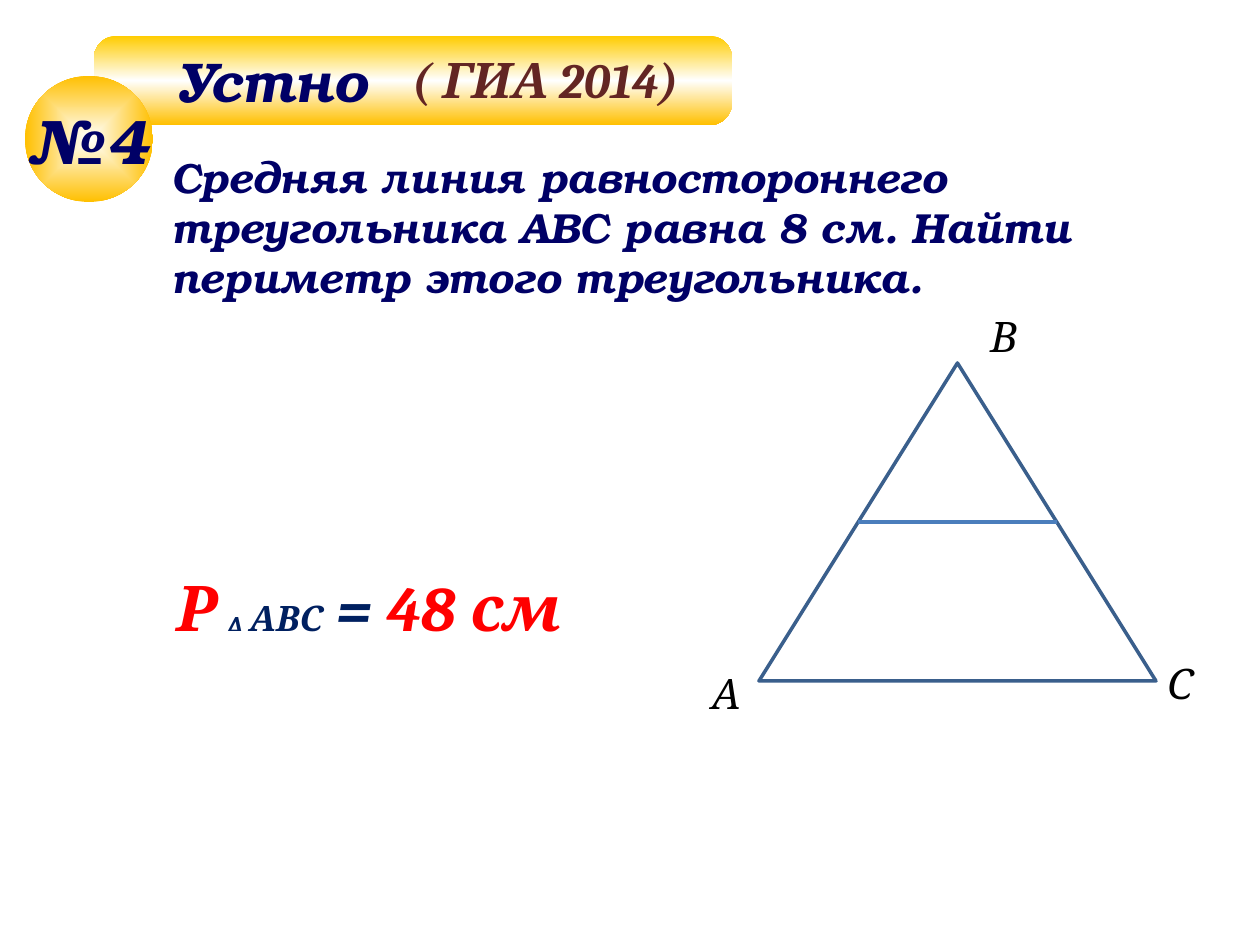
from lxml import etree
from pptx import Presentation
from pptx.dml.color import RGBColor
from pptx.enum.shapes import MSO_CONNECTOR, MSO_SHAPE
from pptx.enum.text import MSO_ANCHOR, MSO_AUTO_SIZE, PP_ALIGN
from pptx.oxml.ns import qn
from pptx.util import Emu, Pt

EMU_PER_PX = 914400 / 126
TRIANGLE, OVAL = MSO_SHAPE.ISOSCELES_TRIANGLE, MSO_SHAPE.OVAL
BANNER = MSO_SHAPE.ROUNDED_RECTANGLE
STRAIGHT = MSO_CONNECTOR.STRAIGHT
MIDDLE, FIT = MSO_ANCHOR.MIDDLE, MSO_AUTO_SIZE.SHAPE_TO_FIT_TEXT
LEFT, CENTER = PP_ALIGN.LEFT, PP_ALIGN.CENTER

SERIF, DISPLAY = "Cambria", "TeX Gyre Bonum"
NAVY, BLUE, RED, BROWN = "000066", "002060", "FF0000", "632523"
GOLD, YELLOW, WHITE, BLACK = "FFC000", "FFCC00", "FFFFFF", "000000"
OUTLINE, MIDLINE = "3A5F8C", "4B7EBC"


def px(n):
    return Emu(round(n * EMU_PER_PX))


def rgb(value):
    return RGBColor.from_string(value)


class Deck:
    def __init__(self, width, height):
        self.prs = Presentation()
        self.prs.slide_width, self.prs.slide_height = px(width), px(height)
        self.s = self.prs.slides.add_slide(self.prs.slide_layouts[6])

    def shape(self, kind, box, fill=None, line=None, line_pt=1):
        sp = self.s.shapes.add_shape(kind, *map(px, box))
        sp.shadow.inherit = False
        if fill:
            sp.fill.solid()
            sp.fill.fore_color.rgb = rgb(fill)
        if line:
            sp.line.color.rgb = rgb(line)
            sp.line.width = Pt(line_pt)
        else:
            sp.line.fill.background()
        return sp

    def gradient(self, sp, stops, radial=False):
        """Fill from top to bottom, or from the centre outwards."""
        sp.fill.gradient()
        grad = sp.element.spPr.find(qn("a:gradFill"))
        for child in list(grad):
            grad.remove(child)
        gs_list = etree.SubElement(grad, qn("a:gsLst"))
        for percent, color in stops:
            gs = etree.SubElement(gs_list, qn("a:gs"), pos=str(percent * 1000))
            etree.SubElement(gs, qn("a:srgbClr"), val=color)
        if radial:
            way = etree.SubElement(grad, qn("a:path"), {"path": "shape"})
            etree.SubElement(way, qn("a:fillToRect"), dict.fromkeys("ltrb", "50000"))
        else:
            etree.SubElement(grad, qn("a:lin"), ang="5400000", scaled="1")

    def line(self, start, end, color, width_pt):
        cx = self.s.shapes.add_connector(STRAIGHT, *map(px, start + end))
        cx.line.color.rgb = rgb(color)
        cx.line.width = Pt(width_pt)
        etree.SubElement(cx.element.spPr, qn("a:effectLst"))

    def add_runs(self, sp, runs, font, align=LEFT, bold=True, wrap=True):
        """Add italic runs, each given as (text, size, color)."""
        tf = sp.text_frame
        tf.word_wrap = wrap
        p = tf.paragraphs[0]
        p.alignment = align
        for text, size, color in runs:
            r = p.add_run()
            r.text = text
            r.font.name, r.font.size = font, Pt(size)
            r.font.bold, r.font.italic = bold, True
            r.font.color.rgb = rgb(color)
        return tf

    def text(self, box, runs, font, bold=True):
        sp = self.s.shapes.add_textbox(*map(px, box))
        self.add_runs(sp, runs, font, bold=bold).auto_size = FIT


def draw_triangle(deck):
    left, top, width, height = 759, 363, 397, 318
    deck.shape(TRIANGLE, (left, top, width, height), WHITE, OUTLINE, 2)
    mid_y = top + height / 2
    deck.line((left + width / 4, mid_y), (left + width * 3 / 4, mid_y), MIDLINE, 2.75)
    for letter, x, y, w in (("А", 699, 661, 69), ("В", 978, 304, 59), ("С", 1155, 651, 49)):
        deck.text((x, y, w, 64), [(letter, 24, BLACK)], SERIF, bold=False)


def draw_heading(deck):
    banner = deck.shape(BANNER, (94, 36, 638, 89))
    banner.adjustments[0] = 0.25
    deck.gradient(banner, [(0, YELLOW), (50, WHITE), (100, GOLD)])
    tf = deck.add_runs(banner, [("Устно", 32, NAVY)], DISPLAY)
    tf.vertical_anchor = MIDDLE
    tf.margin_left = px(74)
    deck.text((400, 43, 327, 72), [("( ГИА 2014)", 28, BROWN)], SERIF)

    badge = deck.shape(OVAL, (25, 76, 128, 126))
    deck.gradient(badge, [(0, WHITE), (100, GOLD)], radial=True)
    tf = deck.add_runs(badge, [("№4", 36, NAVY)], DISPLAY, CENTER, wrap=False)
    tf.vertical_anchor = MIDDLE


def main():
    deck = Deck(1260, 945)
    draw_triangle(deck)
    draw_heading(deck)
    problem = ("Средняя линия равностороннего треугольника АВС равна 8 см. "
               "Найти периметр этого треугольника.")
    deck.text((159, 145, 1016, 165), [(problem, 24, NAVY)], DISPLAY)
    answer = [("Р", 36, RED), (" ", 28, BLUE), ("∆", 12, BLUE), (" АВС", 20, BLUE),
              (" = ", 36, BLUE), ("48 см", 36, RED)]
    deck.text((164, 562, 476, 89), answer, SERIF)
    deck.prs.save("out.pptx")


if __name__ == "__main__":
    main()
